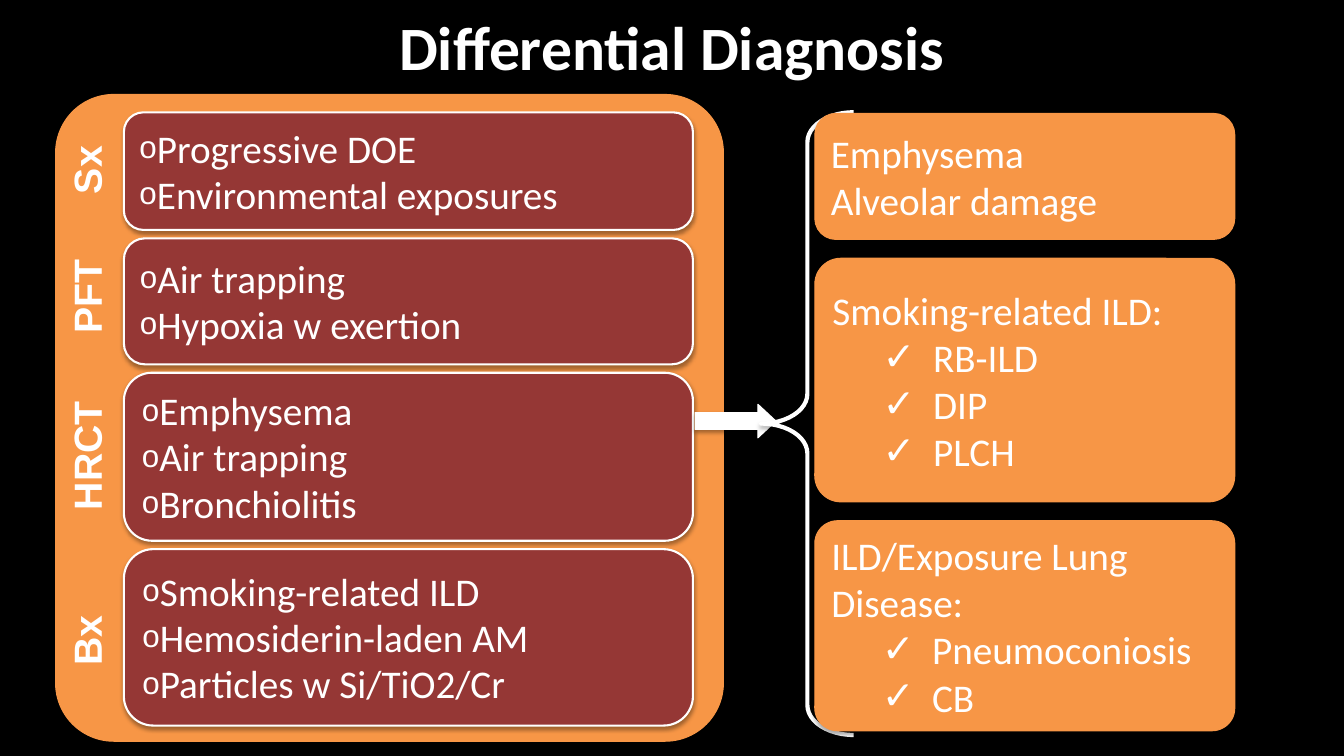
from lxml import etree
from pptx import Presentation
from pptx import util as u
from pptx.dml.color import RGBColor
from pptx.enum import shapes, text
from pptx.oxml import parse_xml
from pptx.oxml.ns import nsdecls, qn

PX = 9525
COLORS = {"black": "000000", "white": "FFFFFF", "orange": "F79646", "maroon": "953735"}
SHAPE = shapes.MSO_SHAPE
ALIGN = text.PP_ALIGN
BODY = {"name": "Calibri", "size": u.Pt(28), "bold": False}
LABEL = {"name": "Arial", "size": u.Pt(28), "bold": True}
TITLE = {"name": "Calibri", "size": u.Pt(44), "bold": True}
CIRCLE = {"char": "o", "pct": 80, "left": 10, "indent": -29}
CHECK = {"char": "✓", "pct": 100, "left": 96, "indent": -48}
GAP_LEFT, GAP_RIGHT = 8, 18

# label, label width, label centre, box height, findings
FINDINGS = [
    ("Sx", 80, 162, 112, ["Progressive DOE", "Environmental exposures"]),
    ("PFT", 96, 282, 120, ["Air trapping", "Hypoxia w exertion"]),
    ("HRCT", 128, 434, 160, ["Emphysema", "Air trapping", "Bronchiolitis"]),
    ("Bx", 128, 610, 168,
     ["Smoking-related ILD", "Hemosiderin-laden AM", "Particles w Si/TiO2/Cr"]),
]
# box height, corner, plain lines, checked lines
DIAGNOSES = [
    (120, 0.167, ["Emphysema", "Alveolar damage"], []),
    (232, 0.107, ["Smoking-related ILD:"], ["RB-ILD", "DIP", "PLCH"]),
    (200, 0.108, ["ILD/Exposure Lung Disease:"], ["Pneumoconiosis", "CB"]),
]


def rgb(name):
    return RGBColor.from_string(COLORS[name])


def emu(*lengths):
    return [u.Emu(n * PX) for n in lengths]


def add_shadow(sp, alpha=35):
    sp.shadow.inherit = False
    effects = sp._element.spPr.find(qn("a:effectLst"))
    effects.append(parse_xml(
        f'<a:outerShdw {nsdecls("a")} blurRad="39370" dist="22860" dir="5400000" '
        f'rotWithShape="0"><a:srgbClr val="{COLORS["black"]}">'
        f'<a:alpha val="{alpha * 1000}"/></a:srgbClr></a:outerShdw>'))


def add_figure(s, kind, box, fill, line, width, adj=()):
    sp = s.shapes.add_shape(kind, *emu(*box))
    if fill:
        sp.fill.solid()
        sp.fill.fore_color.rgb = rgb(fill)
    else:
        sp.fill.background()
    sp.line.color.rgb = rgb(line)
    sp.line.width = u.Pt(width)
    for i, value in enumerate(adj):
        sp.adjustments[i] = value
    add_shadow(sp)
    return sp


def add_bullet(p, bullet):
    pPr = p._p.get_or_add_pPr()
    left, indent = emu(bullet["left"], bullet["indent"])
    pPr.set("marL", str(left))
    pPr.set("indent", str(indent))
    for tag, key, value in (("buSzPct", "val", bullet["pct"] * 1000),
                            ("buFont", "typeface", "Arial"),
                            ("buChar", "char", bullet["char"])):
        etree.SubElement(pPr, qn(f"a:{tag}")).set(key, str(value))


def write(sp, lines, fmt, align=ALIGN.LEFT, spacing=None):
    """Fill a shape with (text, bullet) lines."""
    tf = sp.text_frame
    tf.word_wrap = True
    tf.vertical_anchor = text.MSO_ANCHOR.MIDDLE
    for i, (line, bullet) in enumerate(lines):
        p = tf.add_paragraph() if i else tf.paragraphs[0]
        if bullet:
            add_bullet(p, bullet)
        p.alignment = align
        if spacing:
            p.line_spacing = u.Pt(spacing)
        r = p.add_run()
        r.text = line
        for key, value in fmt.items():
            setattr(r.font, key, value)
        r.font.color.rgb = rgb("white")


def add_label(s, box, words, fmt, rotation=0):
    sp = s.shapes.add_textbox(*emu(*box))
    sp.rotation = rotation
    write(sp, [(words, None)], fmt, ALIGN.CENTER)


def main():
    prs = Presentation()
    prs.slide_width, prs.slide_height = emu(1280, 720)
    s = prs.slides.add_slide(prs.slide_layouts[6])
    s.background.fill.solid()
    s.background.fill.fore_color.rgb = rgb("black")

    # Title
    add_label(s, (208, 0, 864, 88), "Differential Diagnosis", TITLE)

    # Findings panel
    add_figure(s, SHAPE.ROUNDED_RECTANGLE, (53, 90, 636, 616),
               "orange", "orange", 0.75, [0.09])
    top = 107
    for label, width, middle, height, findings in FINDINGS:
        sp = add_figure(s, SHAPE.ROUNDED_RECTANGLE, (118, top, 542, height),
                        "maroon", "white", 1.5)
        write(sp, [(line, CIRCLE) for line in findings], BODY, spacing=33)
        add_label(s, (82 - width // 2, middle - 28, width, 56), label, LABEL, 270)
        top += height + GAP_LEFT

    # Arrow and brace
    add_figure(s, SHAPE.RIGHT_ARROW, (662, 385, 77, 32), "white", "white", 0.75, [0.5, 0.535])
    add_figure(s, SHAPE.LEFT_BRACE, (725, 107, 88, 593), None, "white", 3, [0.323, 0.5])

    # Diagnoses
    top = 108
    for height, corner, plain, checked in DIAGNOSES:
        sp = add_figure(s, SHAPE.ROUNDED_RECTANGLE, (776, top, 400, height),
                        "orange", "orange", 0.75, [corner])
        write(sp, [(line, None) for line in plain] + [(line, CHECK) for line in checked], BODY)
        top += height + GAP_RIGHT

    prs.save("out.pptx")


if __name__ == "__main__":
    main()
